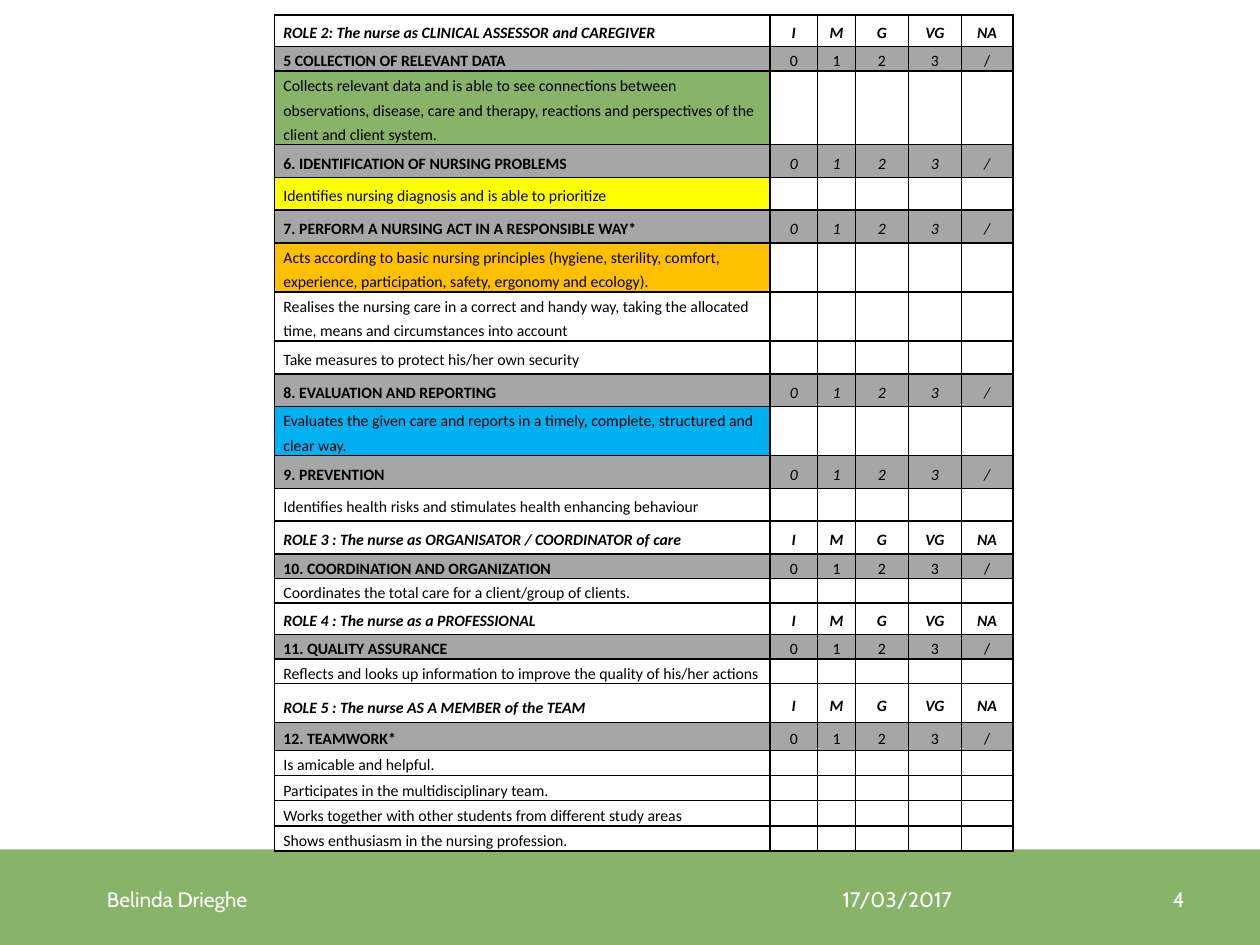
"""Build the nursing competence assessment slide with its scoring table and footer."""
from dataclasses import dataclass
from enum import Enum

from lxml.etree import SubElement
from pptx import Presentation
from pptx.dml.color import RGBColor
from pptx.enum.shapes import MSO_SHAPE
from pptx.enum.text import MSO_ANCHOR as ANCHOR, PP_ALIGN as ALIGN
from pptx.oxml.ns import qn
from pptx.util import Inches, Pt

BLACK = RGBColor(0x00, 0x00, 0x00)
WHITE = RGBColor(0xFF, 0xFF, 0xFF)
GREEN = RGBColor(0x89, 0xB3, 0x68)
GREY = RGBColor(0xA6, 0xA6, 0xA6)
YELLOW = RGBColor(0xFF, 0xFF, 0x00)
ORANGE = RGBColor(0xFF, 0xC0, 0x00)
BLUE = RGBColor(0x00, 0xB0, 0xF0)

GRADES = ("I", "M", "G", "VG", "NA")
SCORES = ("0", "1", "2", "3", "/")
NO_MARKS = ("",) * 5
COL_WIDTHS = (3.93, 0.38, 0.3, 0.42, 0.42, 0.41)


class Kind(Enum):
    ROLE = "role"
    SECTION = "section"
    ITEM = "item"


@dataclass
class Row:
    kind: Kind
    text: str
    height: float
    fill: RGBColor = WHITE
    italic_scores: bool = False
    spacing: float | Pt = Pt(14)


def role(text: str, height: float = 0.25, spacing: float | Pt = Pt(14)) -> Row:
    return Row(Kind.ROLE, text, height, spacing=spacing)


def section(text: str, height: float = 0.18, italic: bool = False) -> Row:
    return Row(Kind.SECTION, text, height, GREY, italic)


def item(text: str, height: float = 0.2, fill: RGBColor = WHITE) -> Row:
    return Row(Kind.ITEM, text, height, fill)


ROWS = (
    role("ROLE 2: The nurse as CLINICAL ASSESSOR and CAREGIVER"),
    section("5 COLLECTION OF RELEVANT DATA"),
    item("Collects relevant data and is able to see connections between observations, "
         "disease, care and therapy, reactions and perspectives of the client and "
         "client system.", 0.53, GREEN),
    section("6. IDENTIFICATION OF NURSING PROBLEMS", 0.26, True),
    item("Identifies nursing diagnosis and is able to prioritize", 0.26, YELLOW),
    section("7. PERFORM A NURSING ACT IN A RESPONSIBLE WAY*", 0.26, True),
    item("Acts according to basic nursing principles (hygiene, sterility, comfort, "
         "experience, participation, safety, ergonomy and ecology).", 0.35, ORANGE),
    item("Realises the nursing care in a correct and handy way, taking the allocated "
         "time, means and circumstances into account", 0.35),
    item("Take measures to protect his/her own security", 0.26),
    section("8. EVALUATION AND REPORTING", 0.26, True),
    item("Evaluates the given care and reports in a timely, complete, structured and "
         "clear way.", 0.35, BLUE),
    section("9. PREVENTION", 0.26, True),
    item("Identifies health risks and stimulates health enhancing behaviour", 0.26),
    role("ROLE 3 : The nurse as ORGANISATOR / COORDINATOR of care", 0.26),
    section("10. COORDINATION AND ORGANIZATION", 0.19),
    item("Coordinates the total care for a client/group of clients.", 0.18),
    role("ROLE 4 : The nurse as a PROFESSIONAL"),
    section("11. QUALITY ASSURANCE"),
    item("Reflects and looks up information to improve the quality of his/her actions", 0.18),
    role("ROLE 5 : The nurse AS A MEMBER of the TEAM", 0.31, 1.5),
    section("12. TEAMWORK*", 0.22),
    item("Is amicable and helpful."),
    item("Participates in the multidisciplinary team."),
    item("Works together with other students from different study areas"),
    item("Shows enthusiasm in the nursing profession."),
)


def add_borders(cell) -> None:
    tc_pr = cell._tc.get_or_add_tcPr()
    for side in ("a:lnL", "a:lnR", "a:lnT", "a:lnB"):
        ln = SubElement(tc_pr, qn(side), w=str(Pt(1)))
        fill = SubElement(ln, qn("a:solidFill"))
        SubElement(fill, qn("a:srgbClr"), val=str(BLACK))


def fill_cell(cell, text: str, fill: RGBColor, bold: bool, italic: bool,
              align: ALIGN, spacing: float | Pt) -> None:
    add_borders(cell)
    cell.fill.solid()
    cell.fill.fore_color.rgb = fill
    cell.vertical_anchor = ANCHOR.MIDDLE
    cell.margin_left = cell.margin_right = Inches(0.07)
    cell.margin_top = cell.margin_bottom = 0
    p = cell.text_frame.paragraphs[0]
    p.text = text
    p.alignment = align
    p.line_spacing = spacing
    font = p.font
    font.name, font.size = "Calibri", Pt(9)
    font.bold, font.italic = bold, italic
    font.color.rgb = BLACK


def add_assessment(s) -> None:
    frame = s.shapes.add_table(len(ROWS), len(COL_WIDTHS), Inches(2.18), Inches(0.12),
                               Inches(sum(COL_WIDTHS)),
                               Inches(sum(row.height for row in ROWS)))
    table = frame.table
    table.first_row = table.horz_banding = False
    for column, width in zip(table.columns, COL_WIDTHS):
        column.width = Inches(width)
    marks = {Kind.ROLE: GRADES, Kind.SECTION: SCORES, Kind.ITEM: NO_MARKS}
    for i, row in enumerate(ROWS):
        table.rows[i].height = Inches(row.height)
        is_role = row.kind is Kind.ROLE
        fill_cell(table.cell(i, 0), row.text, row.fill, row.kind is not Kind.ITEM,
                  is_role, ALIGN.LEFT, row.spacing)
        mark_fill = GREY if row.kind is Kind.SECTION else WHITE
        for j, mark in enumerate(marks[row.kind], start=1):
            fill_cell(table.cell(i, j), mark, mark_fill, is_role,
                      is_role or row.italic_scores, ALIGN.CENTER, Pt(14))


def add_band(s) -> None:
    band = s.shapes.add_shape(MSO_SHAPE.RECTANGLE, 0, Inches(6.74), Inches(10.04), Inches(0.79))
    band.shadow.inherit = False
    band.fill.solid()
    band.fill.fore_color.rgb = GREEN
    band.line.fill.background()


def add_footer(s, text: str, left: float, width: float, align: ALIGN = ALIGN.LEFT) -> None:
    box = s.shapes.add_textbox(Inches(left), Inches(6.94), Inches(width), Inches(0.4))
    tf = box.text_frame
    tf.word_wrap = True
    tf.vertical_anchor = ANCHOR.MIDDLE
    p = tf.paragraphs[0]
    p.text = text
    p.alignment = align
    p.font.name, p.font.size = "Cabin", Pt(12)
    p.font.color.rgb = WHITE


def main() -> None:
    prs = Presentation()
    prs.slide_width, prs.slide_height = Inches(10), Inches(7.5)
    s = prs.slides.add_slide(prs.slide_layouts[6])
    add_band(s)
    add_assessment(s)
    add_footer(s, "17/03/2017", 6.59, 2.33)
    add_footer(s, "Belinda Drieghe", 0.75, 5.79)
    add_footer(s, "4", 8.92, 0.58, ALIGN.RIGHT)
    prs.save("out.pptx")


if __name__ == "__main__":
    main()
